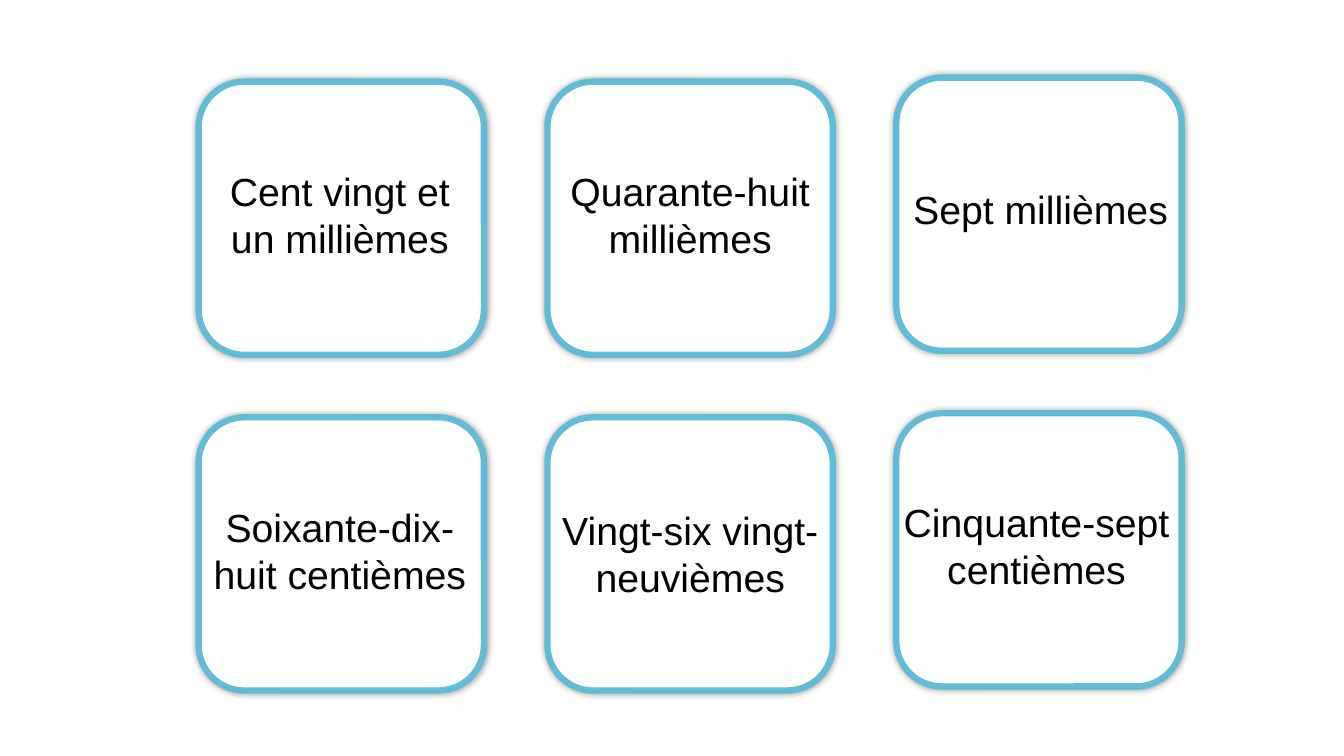
from lxml import etree
from pptx import Presentation
from pptx.dml.color import RGBColor
from pptx.enum.shapes import MSO_SHAPE
from pptx.enum.text import MSO_AUTO_SIZE, PP_ALIGN
from pptx.oxml.ns import qn
from pptx.util import Inches, Pt

THEME = {
    "font": "Arial",
    "size": Pt(28),
    "text": RGBColor.from_string("000000"),
    "card": RGBColor.from_string("FFFFFF"),
    "border": RGBColor.from_string("62BCD7"),
    "border_width": Pt(4.5),
    "shadow": "000000",
}

# Card grid, in inches; the last column sits slightly higher
LEFT, TOP = 1.97, 0.81
CARD_WIDTH, CARD_HEIGHT = 2.83, 2.71
COLUMN_STEP, ROW_STEP = 3.46, 3.33
COLUMN_LIFT = [0, 0, 0.04]

# Wording, then label left and top relative to its card, width and height
CARDS = [
    [("Cent vingt et un millièmes", -0.03, 0.8, 2.86, 1.04),
     ("Quarante-huit millièmes", 0, 0.8, 2.83, 1.04),
     ("Sept millièmes", 0, 1.02, 2.86, 0.57)],
    [("Soixante-dix-huit centièmes", -0.05, 0.8, 2.9, 1.04),
     ("Vingt-six vingt-neuvièmes", -0.11, 0.83, 3.05, 1.04),
     ("Cinquante-sept centièmes", -0.04, 0.79, 2.86, 1.04)],
]


def add_card(slide, left, top):
    card = slide.shapes.add_shape(
        MSO_SHAPE.ROUNDED_RECTANGLE, Inches(left), Inches(top),
        Inches(CARD_WIDTH), Inches(CARD_HEIGHT))
    card.fill.solid()
    card.fill.fore_color.rgb = THEME["card"]
    card.line.color.rgb = THEME["border"]
    card.line.width = THEME["border_width"]
    # Soft shadow all round the card
    card.shadow.inherit = False
    effects = card._element.spPr.find(qn("a:effectLst"))
    shadow = etree.SubElement(effects, qn("a:outerShdw"), blurRad=str(Pt(5)),
                              dist="0", dir="0", algn="ctr", rotWithShape="0")
    color = etree.SubElement(shadow, qn("a:srgbClr"), val=THEME["shadow"])
    etree.SubElement(color, qn("a:alpha"), val="40000")


def add_label(slide, wording, left, top, width, height):
    label = slide.shapes.add_textbox(
        Inches(left), Inches(top), Inches(width), Inches(height))
    frame = label.text_frame
    frame.word_wrap = True
    frame.auto_size = MSO_AUTO_SIZE.SHAPE_TO_FIT_TEXT
    paragraph = frame.paragraphs[0]
    paragraph.alignment = PP_ALIGN.CENTER
    run = paragraph.add_run()
    run.text = wording
    run.font.name = THEME["font"]
    run.font.size = THEME["size"]
    run.font.color.rgb = THEME["text"]


presentation = Presentation()
presentation.slide_width = Inches(13.33)
presentation.slide_height = Inches(7.5)
slide = presentation.slides.add_slide(presentation.slide_layouts[6])

# Number cards, each with its label
for row, cards in enumerate(CARDS):
    for column, (wording, shift, drop, width, height) in enumerate(cards):
        left = LEFT + column * COLUMN_STEP
        top = TOP + row * ROW_STEP - COLUMN_LIFT[column]
        add_card(slide, left, top)
        add_label(slide, wording, left + shift, top + drop, width, height)

presentation.save("out.pptx")
